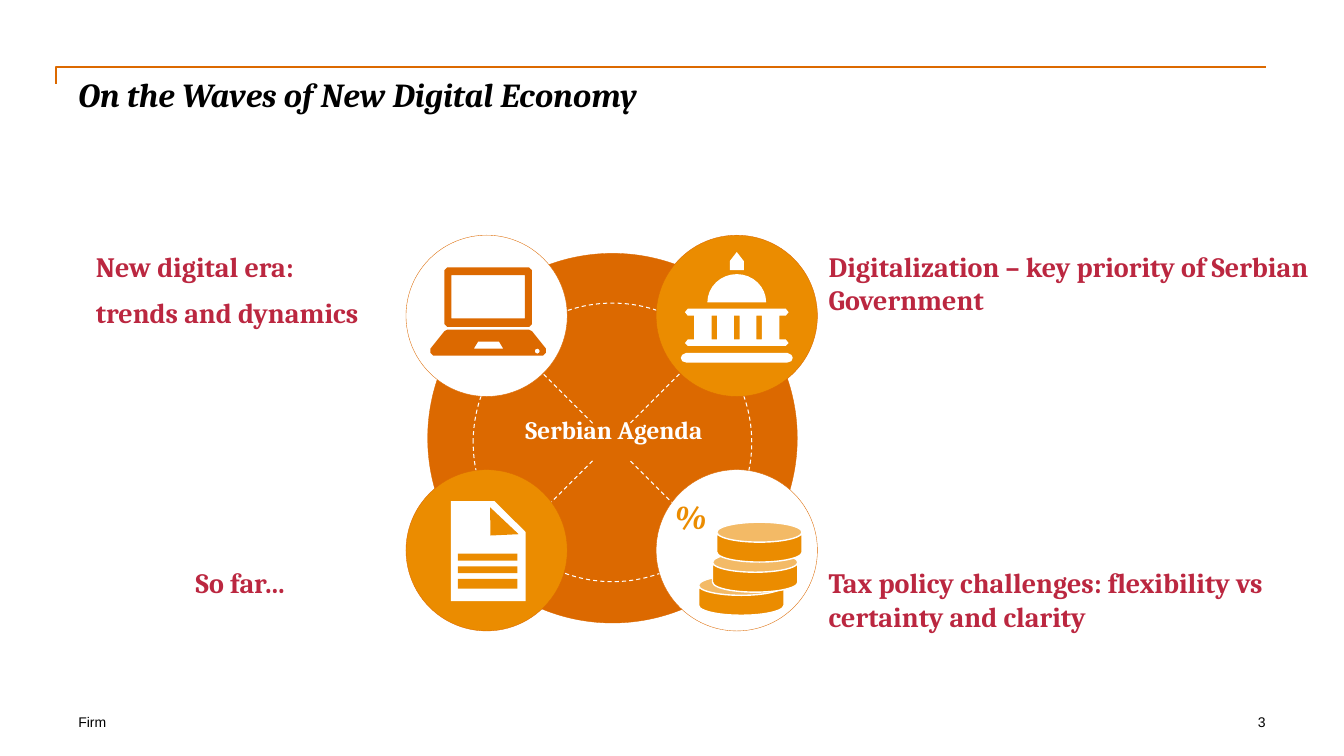
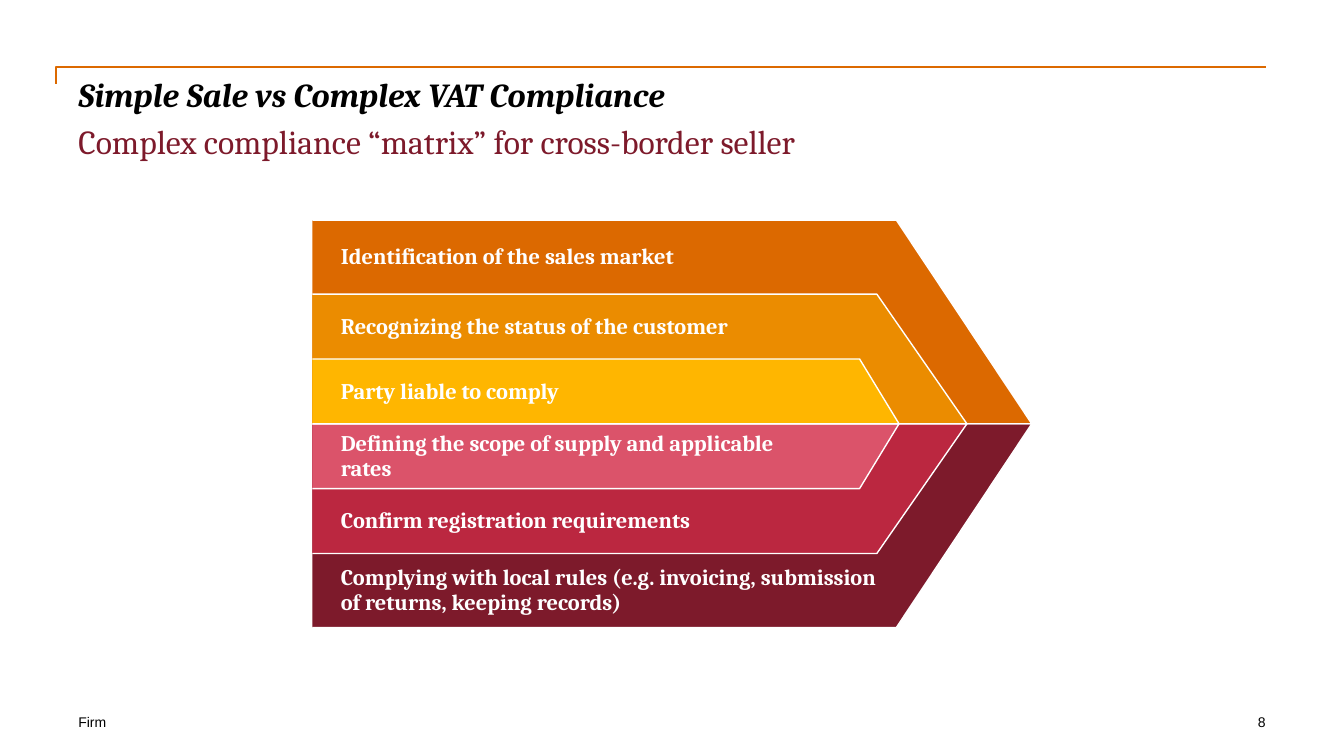
import math
from dataclasses import dataclass

from lxml import etree
from pptx import Presentation
from pptx.dml.color import RGBColor
from pptx.enum.dml import MSO_LINE
from pptx.enum.shapes import MSO_CONNECTOR, MSO_SHAPE
from pptx.enum.text import MSO_ANCHOR, PP_ALIGN
from pptx.oxml.ns import qn
from pptx.util import Pt

DASH = MSO_LINE.DASH
STRAIGHT = MSO_CONNECTOR.STRAIGHT
OVAL, RECTANGLE = MSO_SHAPE.OVAL, MSO_SHAPE.RECTANGLE
TRIANGLE, CAN = MSO_SHAPE.ISOSCELES_TRIANGLE, MSO_SHAPE.CAN
TOP, MIDDLE = MSO_ANCHOR.TOP, MSO_ANCHOR.MIDDLE
LEFT, CENTER, RIGHT = PP_ALIGN.LEFT, PP_ALIGN.CENTER, PP_ALIGN.RIGHT


@dataclass(frozen=True)
class Theme:
    black: str = "000000"
    white: str = "FFFFFF"
    orange: str = "DC6900"
    amber: str = "EB8C00"
    yellow: str = "FFB600"
    pink: str = "DB536A"
    red: str = "BB2740"
    maroon: str = "7D1A2B"
    body_font: str = "Cambria"
    footer_font: str = "Arial"
    title_size: int = 24
    label_size: int = 20
    hub_size: int = 18
    band_size: int = 16
    footer_size: int = 10


THEME = Theme()


def style(shape, fill=None, line=None, weight=0.25):
    """Set fill and outline, where None means none, and remove the shadow."""
    shape.shadow.inherit = False
    if fill:
        shape.fill.solid()
        shape.fill.fore_color.rgb = RGBColor.from_string(fill)
    else:
        shape.fill.background()
    if line:
        shape.line.color.rgb = RGBColor.from_string(line)
        shape.line.width = Pt(weight)
    else:
        shape.line.fill.background()
    return shape


def add_text(slide, box, lines, size, color, bold=False, italic=False,
             font=THEME.body_font, align=LEFT, anchor=TOP, space_after=0, spacing=1.0):
    """Add a text box without margins, one paragraph for each line."""
    frame = slide.shapes.add_textbox(*map(Pt, box)).text_frame
    frame.word_wrap = True
    frame.vertical_anchor = anchor
    frame.margin_left = frame.margin_right = frame.margin_top = frame.margin_bottom = 0
    frame.text = "\n".join(lines)
    for paragraph in frame.paragraphs:
        paragraph.alignment = align
        paragraph.space_after = Pt(space_after)
        paragraph.line_spacing = spacing
        paragraph.font.name = font
        paragraph.font.size = Pt(size)
        paragraph.font.bold = bold
        paragraph.font.italic = italic
        paragraph.font.color.rgb = RGBColor.from_string(color)


presentation = Presentation()
presentation.slide_width, presentation.slide_height = Pt(960), Pt(540)

# Shared frame: corner rule, title, footer and page number
slides = []
for title, number in (("On the Waves of New Digital Economy", "3"),
                      ("Simple Sale vs Complex VAT Compliance", "8")):
    slide = presentation.slides.add_slide(presentation.slide_layouts[6])
    corner = slide.shapes.build_freeform(Pt(40), Pt(60))
    corner.add_line_segments([(Pt(40), Pt(48)), (Pt(904), Pt(48))], close=False)
    style(corner.convert_to_shape(), line=THEME.orange, weight=1)
    add_text(slide, (56, 53, 848, 34), [title], THEME.title_size, THEME.black,
             bold=True, italic=True)
    for box, text, align in (((56, 510, 272, 12), "Firm", LEFT),
                             ((744, 510, 160, 12), number, RIGHT)):
        add_text(slide, box, [text], THEME.footer_size, THEME.black,
                 font=THEME.footer_font, align=align)
    slides.append(slide)
agenda_slide, compliance_slide = slides

# Agenda: hub with dashed ring and spokes
shapes = agenda_slide.shapes
style(shapes.add_shape(OVAL, Pt(305.5), Pt(181), Pt(264), Pt(264)),
      THEME.orange, THEME.orange)
ring = style(shapes.add_shape(OVAL, Pt(338), Pt(216.5), Pt(199), Pt(199)),
             line=THEME.white, weight=0.75)
ring.line.dash_style = DASH
for start_y, end_y in ((245.5, 386), (386, 245.5)):
    spoke = shapes.add_connector(STRAIGHT, Pt(366.5), Pt(start_y), Pt(507), Pt(end_y))
    spoke.line.color.rgb = RGBColor.from_string(THEME.white)
    spoke.line.width = Pt(0.75)
    spoke.line.dash_style = DASH
    etree.SubElement(spoke._element.spPr, qn("a:effectLst"))
style(shapes.add_shape(RECTANGLE, Pt(405.5), Pt(304), Pt(64), Pt(24)),
      THEME.orange, THEME.orange)
add_text(agenda_slide, (336, 296, 205, 26), ["Serbian Agenda"], THEME.hub_size,
         THEME.white, bold=True, align=CENTER)

# Agenda: four icon circles
for column, left in enumerate((290, 468.7)):
    for row, top in enumerate((168, 335.5)):
        fill = THEME.white if column == row else THEME.amber
        style(shapes.add_shape(OVAL, Pt(left), Pt(top), Pt(115.2), Pt(115.2)),
              fill, THEME.orange)

# Agenda: laptop and government icons, inner outlines cut holes
laptop = [
    [(307.5, 249), (317.5, 236.5), (319.5, 235.5), (378, 235.5), (380, 236.5),
     (390, 249), (390, 252), (388, 254), (309.5, 254), (307.5, 252)],
    [(338.5, 249), (341.5, 244), (356.5, 244), (359.5, 249)],
    [(383.8 + 1.8 * math.cos(turn * math.pi / 4), 250.8 + 1.8 * math.sin(turn * math.pi / 4))
     for turn in range(8)],
    [(319.5, 191), (378, 191), (380, 193), (380, 231.5), (378, 233.5),
     (319.5, 233.5), (317.5, 231.5), (317.5, 193)],
    [(322.5, 196.5), (375, 196.5), (375, 227.5), (322.5, 227.5)],
]
middle = 526.3
government = [
    [(middle + side * x, y) for side, x, y in (
        (-1, 35, 220.5), (1, 35, 220.5), (1, 37, 223), (1, 35, 225.5), (1, 30.5, 225.5),
        (1, 30.5, 242.5), (1, 35, 242.5), (1, 37, 245), (1, 35, 247), (-1, 35, 247),
        (-1, 37, 245), (-1, 35, 242.5), (-1, 30.5, 242.5), (-1, 30.5, 225.5),
        (-1, 35, 225.5), (-1, 37, 223))],
    [(middle + x, y) for x, y in (
        (-36, 252), (36, 252), (39, 253.5), (40, 255.6), (39, 258), (36, 259),
        (-36, 259), (-39, 258), (-40, 255.6), (-39, 253.5))],
    [(middle - 21 * math.cos(math.pi * step / 16), 216 - 20.2 * math.sin(math.pi * step / 16))
     for step in range(17)],
    [(middle + x, y) for x, y in (
        (-5, 193), (-5, 186.5), (0, 180), (5, 186.5), (5, 193))],
]
for offset in (-16, 0, 16):
    left, right = middle + offset - 2, middle + offset + 2
    government.append([(left, 225.5), (right, 225.5), (right, 242.5), (left, 242.5)])

for outlines, fill in ((laptop, THEME.orange), (government, THEME.white)):
    icon = None
    for outline in outlines:
        start, *rest = [(Pt(x), Pt(y)) for x, y in outline]
        if icon is None:
            icon = shapes.build_freeform(*start)
        else:
            icon.move_to(*start)
        icon.add_line_segments(rest)
    style(icon.convert_to_shape(), fill)

# Agenda: document icon
for kind, box, rotation, fill in (
        (RECTANGLE, (322, 358, 53.5, 71.5), 0, THEME.white),
        (RECTANGLE, (327, 395.5, 42.5, 5), 0, THEME.amber),
        (RECTANGLE, (327, 404.5, 42.5, 5), 0, THEME.amber),
        (RECTANGLE, (327, 413.5, 42.5, 7), 0, THEME.amber),
        (TRIANGLE, (341.3, 370, 28, 14.5), 223.3, THEME.amber),
        (TRIANGLE, (355, 347.8, 34, 23.8), 44.7, THEME.amber)):
    style(shapes.add_shape(kind, *map(Pt, box)), fill).rotation = rotation

# Agenda: coin stack icon
for left, top in ((499, 411), (509, 394.5), (512, 373)):
    coin = shapes.add_shape(CAN, Pt(left), Pt(top), Pt(61), Pt(28.5))
    coin.adjustments[0] = 0.5
    style(coin, THEME.amber, THEME.white, 1)
add_text(agenda_slide, (481.5, 354, 31, 38), ["%"], THEME.title_size, THEME.amber,
         bold=True, italic=True)

# Agenda: topic labels
for box, lines, align in (
        ((68.5, 178, 225, 68), ["New digital era:", "trends and dynamics"], LEFT),
        ((592, 178, 346, 81), ["Digitalization – key priority of Serbian Government"], LEFT),
        ((68.5, 404, 207, 32), ["So far…"], CENTER),
        ((592, 404, 332, 83),
         ["Tax policy challenges: flexibility vs certainty and clarity"], LEFT)):
    add_text(agenda_slide, box, lines, THEME.label_size, THEME.red, bold=True,
             align=align, space_after=9)

# Compliance: subtitle
add_text(compliance_slide, (56, 86.5, 848, 32),
         ["Complex compliance “matrix” for cross-border seller"],
         THEME.title_size, THEME.maroon)

# Compliance: nested half arrows mirrored about the axis, outermost first
axis, band_left = 302.7, 223.2
band_sizes = ((145.5, 92.6, 640.3, 737), (92.6, 46.3, 626.4, 690.7), (46.3, 0, 614, 642.2))
lower_bands = (
    (THEME.maroon, 388,
     "Complying with local rules (e.g. invoicing, submission of returns, keeping records)"),
    (THEME.red, 337, "Confirm registration requirements"),
    (THEME.pink, 337, "Defining the scope of supply and applicable rates"))
upper_bands = (
    (THEME.orange, 337, "Identification of the sales market"),
    (THEME.amber, 337, "Recognizing the status of the customer"),
    (THEME.yellow, 337, "Party liable to comply"))
for direction, bands in ((1, lower_bands), (-1, upper_bands)):
    for (outer, inner, shoulder, tip), (fill, text_width, text) in zip(band_sizes, bands):
        edge = axis + direction * outer
        band = compliance_slide.shapes.build_freeform(Pt(band_left), Pt(edge))
        band.add_line_segments([(Pt(shoulder), Pt(edge)), (Pt(tip), Pt(axis)),
                                (Pt(band_left), Pt(axis))], close=False)
        style(band.convert_to_shape(), fill, THEME.white, 1)
        text_top = min(edge, axis + direction * inner)
        add_text(compliance_slide, (band_left + 20.3, text_top, text_width, outer - inner),
                 [text], THEME.band_size, THEME.white, bold=True,
                 anchor=MIDDLE, spacing=0.95)

presentation.save("out.pptx")
